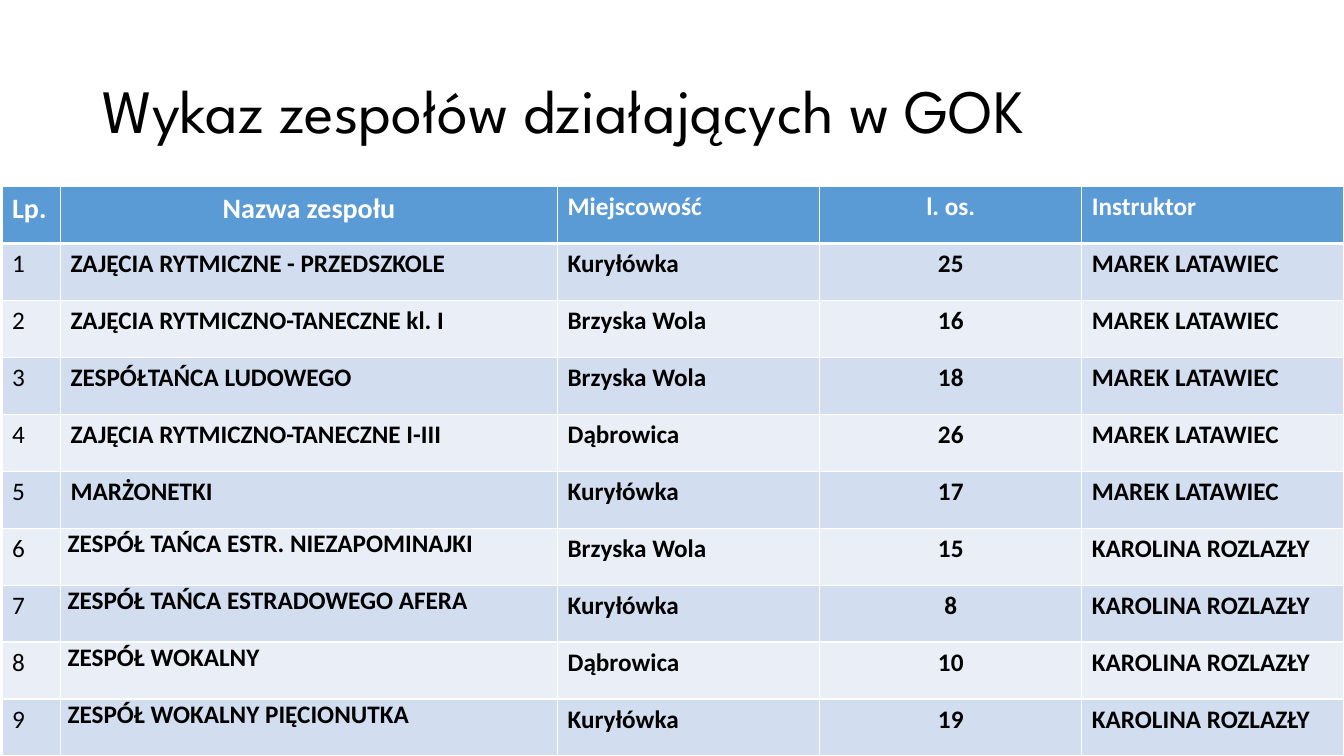
from lxml.etree import SubElement
from pptx import Presentation
from pptx.dml.color import RGBColor
from pptx.enum.text import MSO_ANCHOR, PP_ALIGN
from pptx.oxml.ns import qn
from pptx.util import Inches, Pt

COLORS = {
    "text": "000000",
    "white": "FFFFFF",
    "header": "5B9BD5",
    "odd": "D2DEEF",
    "even": "EAEFF7",
}
COLUMN_WIDTHS = [0.58, 4.93, 2.6, 2.6, 2.6]
ROW_HEIGHT = 0.565
COUNT_COLUMN = 3
HEADINGS = ["Lp.", "Nazwa zespołu", "Miejscowość", "l. os.", "Instruktor"]
HEADING_SIZES = [20, 20, 18, 18, 18]
FIRST_TIGHT_ROW = 6
GROUPS = [
    ("ZAJĘCIA RYTMICZNE - PRZEDSZKOLE", "Kuryłówka", 25, "MAREK LATAWIEC"),
    ("ZAJĘCIA RYTMICZNO-TANECZNE kl. I", "Brzyska Wola", 16, "MAREK LATAWIEC"),
    ("ZESPÓŁTAŃCA LUDOWEGO", "Brzyska Wola", 18, "MAREK LATAWIEC"),
    ("ZAJĘCIA RYTMICZNO-TANECZNE I-III", "Dąbrowica", 26, "MAREK LATAWIEC"),
    ("MARŻONETKI", "Kuryłówka", 17, "MAREK LATAWIEC"),
    ("ZESPÓŁ TAŃCA ESTR. NIEZAPOMINAJKI", "Brzyska Wola", 15, "KAROLINA ROZLAZŁY"),
    ("ZESPÓŁ TAŃCA ESTRADOWEGO AFERA", "Kuryłówka", 8, "KAROLINA ROZLAZŁY"),
    ("ZESPÓŁ WOKALNY", "Dąbrowica", 10, "KAROLINA ROZLAZŁY"),
    ("ZESPÓŁ WOKALNY PIĘCIONUTKA", "Kuryłówka", 19, "KAROLINA ROZLAZŁY"),
]


def write_text(frame, text, size=18, font="Calibri", color="text", bold=False,
               align=PP_ALIGN.LEFT, line_spacing=None):
    paragraph = frame.paragraphs[0]
    paragraph.alignment = align
    paragraph.line_spacing = line_spacing
    run = paragraph.add_run()
    run.text = text
    run.font.size = Pt(size)
    run.font.name = font
    run.font.bold = bold
    run.font.color.rgb = RGBColor.from_string(COLORS[color])


def set_borders(cell, top=1, bottom=1):
    properties = cell._tc.get_or_add_tcPr()
    widths = {"a:lnL": 1, "a:lnR": 1, "a:lnT": top, "a:lnB": bottom}
    for tag, width in widths.items():
        line = SubElement(properties, qn(tag), w=str(Pt(width)))
        fill = SubElement(line, qn("a:solidFill"))
        SubElement(fill, qn("a:srgbClr"), val=COLORS["white"])


def format_cell(cell, text, fill, top=1, bottom=1, **text_format):
    set_borders(cell, top, bottom)
    cell.fill.solid()
    cell.fill.fore_color.rgb = RGBColor.from_string(COLORS[fill])
    write_text(cell.text_frame, text, **text_format)


def add_title(slide, text):
    title = slide.shapes.title
    title.left, title.top = Inches(0.92), Inches(0.4)
    title.width, title.height = Inches(11.5), Inches(1.45)
    title.text_frame.vertical_anchor = MSO_ANCHOR.MIDDLE
    write_text(title.text_frame, text, size=44, font="League Spartan", line_spacing=0.9)


def add_groups_table(slide):
    row_count = len(GROUPS) + 1
    table = slide.shapes.add_table(
        row_count, len(HEADINGS), Inches(0.02), Inches(1.85),
        Inches(sum(COLUMN_WIDTHS)), Inches(ROW_HEIGHT * row_count)).table
    for column, width in zip(table.columns, COLUMN_WIDTHS):
        column.width = Inches(width)
    for row in table.rows:
        row.height = Inches(ROW_HEIGHT)

    for index, (heading, size) in enumerate(zip(HEADINGS, HEADING_SIZES)):
        align = PP_ALIGN.CENTER if index in (1, COUNT_COLUMN) else PP_ALIGN.LEFT
        format_cell(table.cell(0, index), heading, "header", bottom=3,
                    size=size, color="white", bold=True, align=align)

    for number, group in enumerate(GROUPS, start=1):
        for index, value in enumerate((number, *group)):
            format_cell(table.cell(number, index), str(value),
                        "odd" if number % 2 else "even",
                        top=3 if number == 1 else 1, bold=index > 0,
                        align=PP_ALIGN.CENTER if index == COUNT_COLUMN else PP_ALIGN.LEFT)
        if number >= FIRST_TIGHT_ROW:
            name_cell = table.cell(number, 1)
            name_cell.margin_left = name_cell.margin_right = Inches(0.07)
            name_cell.margin_top = name_cell.margin_bottom = 0


def main():
    presentation = Presentation()
    presentation.slide_width = Inches(13.33)
    presentation.slide_height = Inches(7.5)
    slide = presentation.slides.add_slide(presentation.slide_layouts[5])
    add_title(slide, "Wykaz zespołów działających w GOK")
    add_groups_table(slide)
    presentation.save("out.pptx")


if __name__ == "__main__":
    main()
